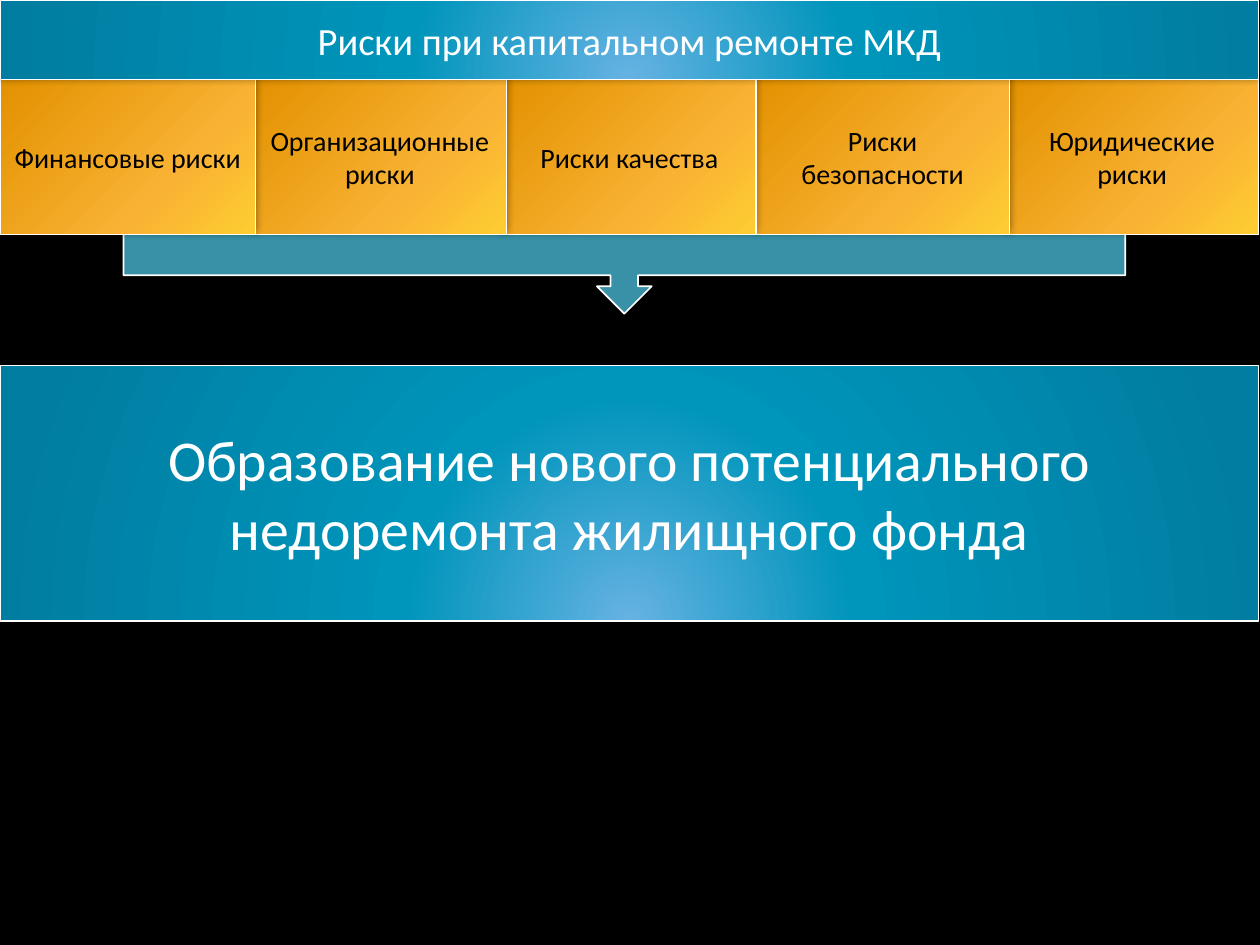
from pptx import Presentation
from pptx.dml.color import RGBColor
from pptx.enum.shapes import MSO_SHAPE
from pptx.enum.text import MSO_ANCHOR, PP_ALIGN
from pptx.oxml import parse_xml
from pptx.oxml.ns import nsdecls, qn
from pptx.util import Inches, Pt

BLACK = RGBColor(0x00, 0x00, 0x00)
WHITE = RGBColor(0xFF, 0xFF, 0xFF)
TEAL = RGBColor(0x38, 0x91, 0xA7)
ORANGE_STOPS = [
    (0, RGBColor(0xFE, 0xCD, 0x32)),
    (34, RGBColor(0xF9, 0xB2, 0x33)),
    (100, RGBColor(0xE2, 0x91, 0x00)),
]
BLUE_STOPS = [
    (0, RGBColor(0x66, 0xB2, 0xE3)),
    (35, RGBColor(0x00, 0x95, 0xBB)),
    (100, RGBColor(0x00, 0x7D, 0xA0)),
]


def add_shape(kind, left, top, width, height, line_width):
    shape = slide.shapes.add_shape(
        kind, Inches(left), Inches(top), Inches(width), Inches(height)
    )
    shape.shadow.inherit = False
    shape.line.color.rgb = WHITE
    shape.line.width = Pt(line_width)
    return shape


def add_panel(text, left, top, width, height, size, color, stops, focus):
    shape = add_shape(MSO_SHAPE.RECTANGLE, left, top, width, height, 0.75)
    properties = shape._element.spPr
    stop_xml = "".join(
        f'<a:gs pos="{position * 1000}"><a:srgbClr val="{stop_color}"/></a:gs>'
        for position, stop_color in stops
    )
    properties.find(qn("a:prstGeom")).addnext(parse_xml(
        f'<a:gradFill {nsdecls("a")} rotWithShape="1"><a:gsLst>{stop_xml}</a:gsLst>'
        f'<a:path path="circle"><a:fillToRect l="{focus * 1000}" t="100000" '
        f'r="{(100 - focus) * 1000}" b="0"/></a:path></a:gradFill>'
    ))
    properties.find(qn("a:effectLst")).append(parse_xml(
        f'<a:outerShdw {nsdecls("a")} blurRad="{Pt(5)}" dist="{Pt(2)}" '
        f'dir="{245 * 60000}" rotWithShape="0"><a:srgbClr val="{BLACK}">'
        '<a:alpha val="50000"/></a:srgbClr></a:outerShdw>'
    ))
    frame = shape.text_frame
    frame.word_wrap = True
    frame.vertical_anchor = MSO_ANCHOR.MIDDLE
    paragraph = frame.paragraphs[0]
    paragraph.text = text
    paragraph.alignment = PP_ALIGN.CENTER
    paragraph.font.name = "Calibri"
    paragraph.font.size = Pt(size)
    paragraph.font.color.rgb = color


presentation = Presentation()
presentation.slide_width = Inches(10)
presentation.slide_height = Inches(7.5)
slide = presentation.slides.add_slide(presentation.slide_layouts[6])
slide.background.fill.solid()
slide.background.fill.fore_color.rgb = BLACK

callout = add_shape(MSO_SHAPE.DOWN_ARROW_CALLOUT, 0.98, 1.62, 7.95, 0.87, 1)
callout.fill.solid()
callout.fill.fore_color.rgb = TEAL

risks = [
    ("Юридические риски", 7.98, 2.01),
    ("Риски безопасности", 6, 2.01),
    ("Риски качества", 3.99, 2.01),
    ("Организационные риски", 2.01, 2.01),
    ("Финансовые риски", 0, 2.03),
]
for risk, left, width in risks:
    add_panel(risk, left, 0.63, width, 1.23, 16, BLACK, ORANGE_STOPS, 100)

banners = [
    ("Риски при капитальном ремонте МКД", 0, 0.63, 22),
    ("Образование нового потенциального недоремонта жилищного фонда", 2.9, 2.03, 33),
]
for banner, top, height, size in banners:
    add_panel(banner, 0, top, 9.99, height, size, WHITE, BLUE_STOPS, 50)

presentation.save("out.pptx")
